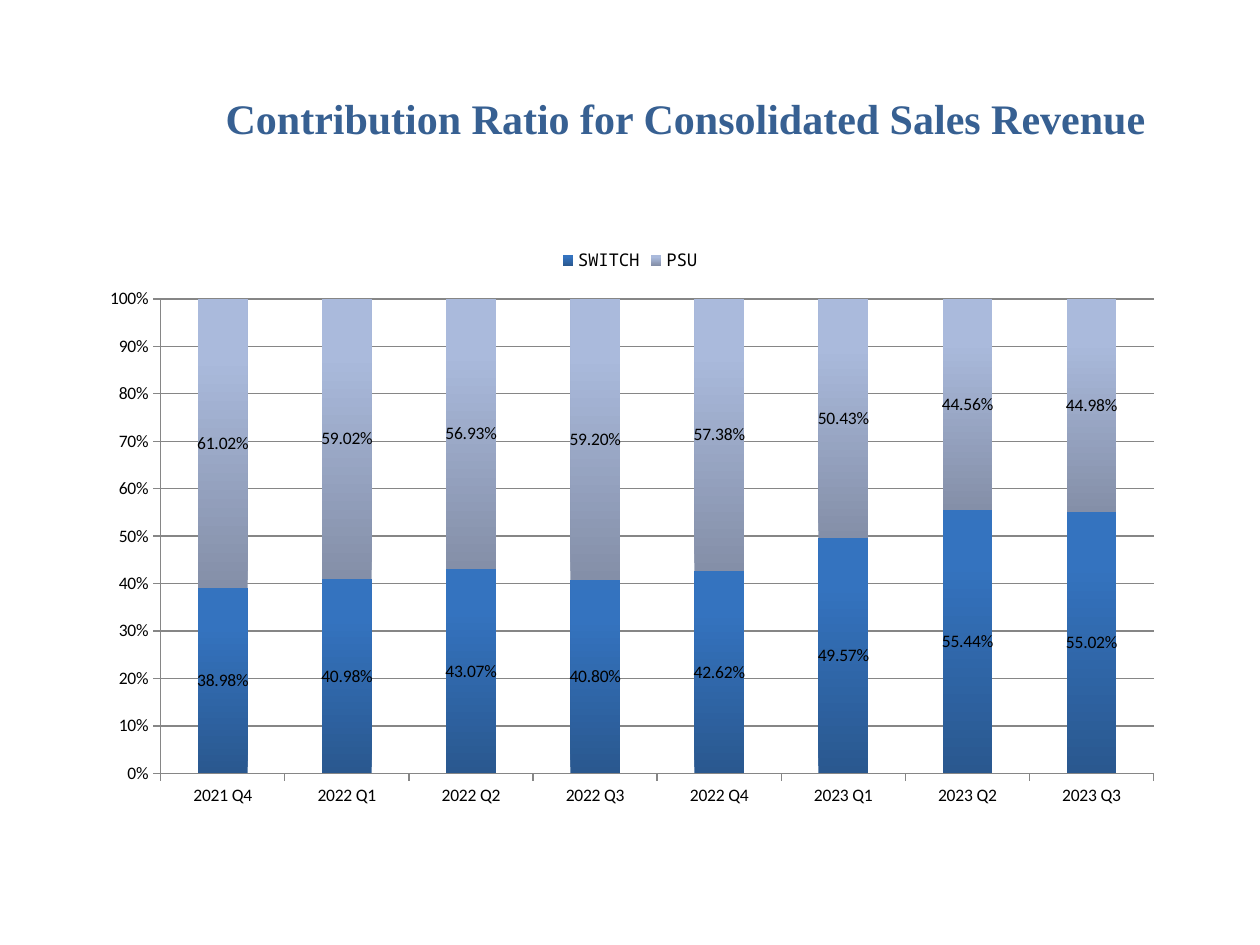
from lxml import etree
from pptx import Presentation
from pptx.chart.data import CategoryChartData
from pptx.dml.color import RGBColor
from pptx.enum.chart import XL_CHART_TYPE as ChartType
from pptx.enum.chart import XL_LABEL_POSITION as LabelPosition
from pptx.enum.chart import XL_LEGEND_POSITION as LegendPosition
from pptx.enum.chart import XL_TICK_MARK as TickMark
from pptx.enum.text import MSO_ANCHOR, PP_ALIGN
from pptx.oxml.ns import qn
from pptx.util import Pt

TITLE_BLUE = RGBColor(0x37, 0x60, 0x92)
BLACK = RGBColor(0, 0, 0)
GRID_GRAY = RGBColor(0x86, 0x86, 0x86)
# Bottom and top colour of each column part
GRADIENTS = [
    (RGBColor(0x2A, 0x58, 0x8F), RGBColor(0x34, 0x73, 0xBF)),
    (RGBColor(0x84, 0x8F, 0xA8), RGBColor(0xAA, 0xBA, 0xDC)),
]

QUARTERS = ["2021 Q4", "2022 Q1", "2022 Q2", "2022 Q3",
            "2022 Q4", "2023 Q1", "2023 Q2", "2023 Q3"]
SHARES = {
    "SWITCH": [0.3898, 0.4098, 0.4307, 0.408, 0.4262, 0.4957, 0.5544, 0.5502],
    "PSU": [0.6102, 0.5902, 0.5693, 0.592, 0.5738, 0.5043, 0.4456, 0.4498],
}


def set_font(font, name, size, color, bold=False):
    font.name = name
    font.size = Pt(size)
    font.bold = bold
    font.color.rgb = color


def place_title(slide, left, top, width, height):
    title = slide.shapes.title
    title.left, title.top = Pt(left), Pt(top)
    title.width, title.height = Pt(width), Pt(height)
    text_frame = title.text_frame
    text_frame.text = "Contribution Ratio for Consolidated Sales Revenue"
    text_frame.word_wrap = True
    text_frame.vertical_anchor = MSO_ANCHOR.TOP
    paragraph = text_frame.paragraphs[0]
    paragraph.alignment = PP_ALIGN.LEFT
    set_font(paragraph.runs[0].font, "Times New Roman", 24, TITLE_BLUE, bold=True)


def set_plot_layout(plot, x, y, w, h):
    """Fix the inner plot area, in fractions of the chart."""
    plot_area = plot._element.getparent()
    for old_layout in plot_area.findall(qn("c:layout")):
        plot_area.remove(old_layout)
    layout = etree.Element(qn("c:layout"))
    manual = etree.SubElement(layout, qn("c:manualLayout"))
    settings = {"layoutTarget": "inner", "xMode": "edge", "yMode": "edge",
                "x": x, "y": y, "w": w, "h": h}
    for tag, value in settings.items():
        etree.SubElement(manual, qn(f"c:{tag}")).set("val", str(value))
    plot_area.insert(0, layout)


def format_axes(chart):
    for axis in (chart.category_axis, chart.value_axis):
        axis.major_tick_mark = TickMark.OUTSIDE
        axis.minor_tick_mark = TickMark.NONE
        axis.format.line.color.rgb = GRID_GRAY
    value_axis = chart.value_axis
    value_axis.minimum_scale, value_axis.maximum_scale = 0, 1
    value_axis.major_unit = 0.1
    value_axis.tick_labels.number_format = "0%"
    value_axis.tick_labels.number_format_is_linked = False
    value_axis.has_major_gridlines = True
    value_axis.major_gridlines.format.line.color.rgb = GRID_GRAY


def format_series(series, bottom_color, top_color):
    fill = series.format.fill
    fill.gradient()
    fill.gradient_angle = 90
    bottom, top = fill.gradient_stops
    bottom.color.rgb, bottom.position = bottom_color, 0
    top.color.rgb, top.position = top_color, 0.8
    labels = series.data_labels
    labels.show_value = True
    labels.number_format = "0.00%"
    labels.number_format_is_linked = False
    labels.position = LabelPosition.CENTER
    set_font(labels.font, "Calibri", 10, BLACK)


def place_share_chart(slide, left, top, width, height):
    data = CategoryChartData(number_format="0.00%")
    data.categories = QUARTERS
    for name, values in SHARES.items():
        data.add_series(name, values)
    chart = slide.shapes.add_chart(
        ChartType.COLUMN_STACKED, Pt(left), Pt(top), Pt(width), Pt(height), data
    ).chart
    chart.has_title = False
    set_font(chart.font, "Calibri", 10, BLACK)

    chart.has_legend = True
    chart.legend.position = LegendPosition.TOP
    chart.legend.include_in_layout = False
    set_font(chart.legend.font, "Noto Sans Mono", 10, BLACK)

    plot = chart.plots[0]
    plot.gap_width, plot.overlap = 150, 100
    plot.vary_by_categories = False
    set_plot_layout(plot, 0.07, 0.11, 0.91, 0.81)
    format_axes(chart)
    for series, colors in zip(plot.series, GRADIENTS):
        format_series(series, *colors)


def main():
    presentation = Presentation()
    presentation.slide_width, presentation.slide_height = Pt(720), Pt(540)
    slide = presentation.slides.add_slide(presentation.slide_layouts[5])
    place_title(slide, 121.7, 49, 544.3, 85)
    place_share_chart(slide, 48.2, 134, 623.5, 334.8)
    presentation.save("out.pptx")


if __name__ == "__main__":
    main()
